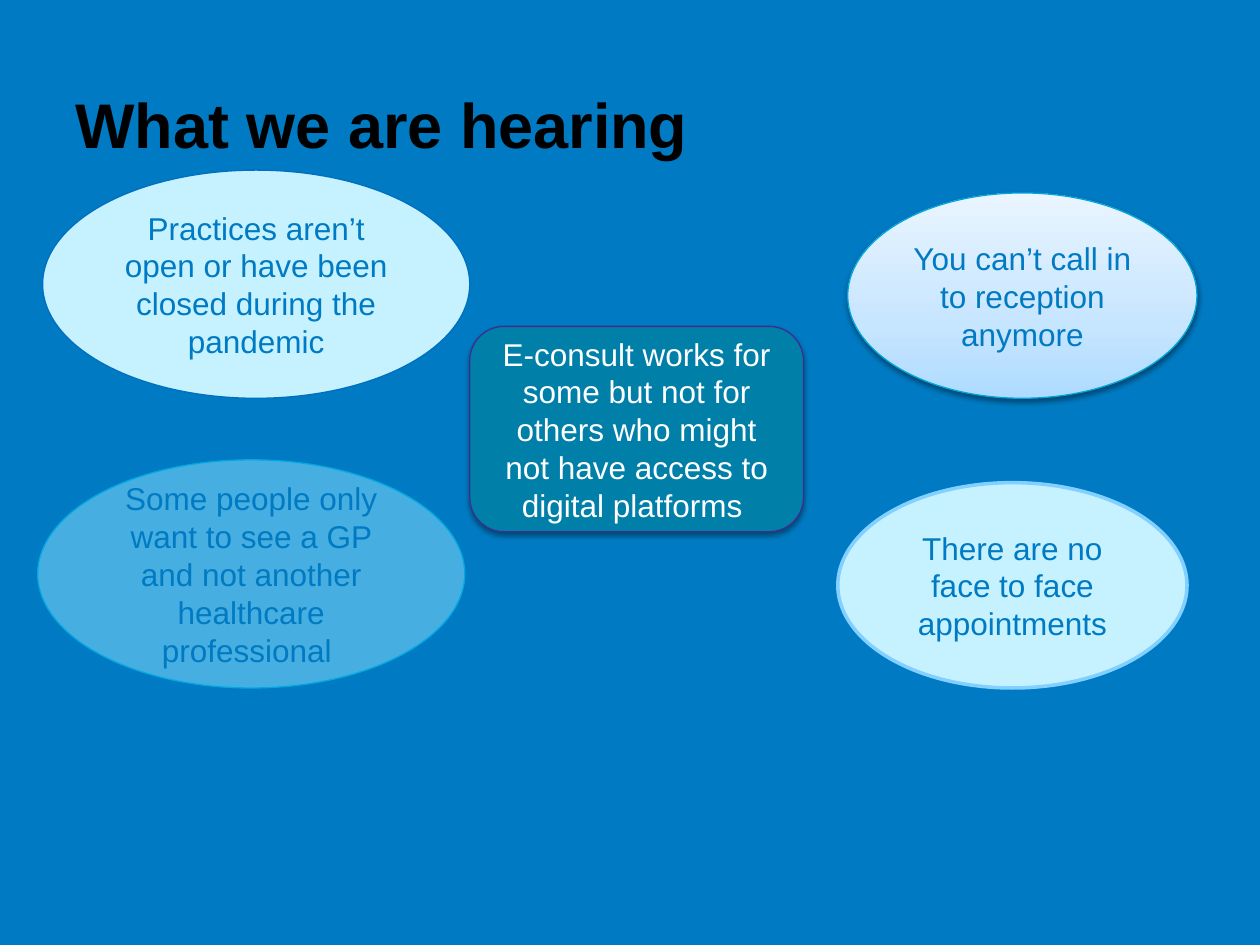
from lxml.etree import SubElement
from pptx import Presentation
from pptx.dml.color import RGBColor as RGB
from pptx.enum.shapes import MSO_SHAPE as Shape
from pptx.enum.text import MSO_ANCHOR as Anchor, PP_ALIGN as Align
from pptx.oxml.ns import qn
from pptx.util import Cm, Pt

COLORS = {
    "background": "007AC2", "title": "000000", "text": "007AC2",
    "white": "FFFFFF", "pale": "C6F1FF", "sky": "8DE3FF", "teal": "007FA9",
    "blue_line": "0070C0", "purple_line": "3D2D91", "cyan_line": "00A9E1",
    "light_line": "81D0FF", "aqua_line": "00A5DC", "shadow": "000000",
    "fade_low": "AEDBFF", "fade_middle": "C6E5FF", "fade_high": "E9F5FF",
}
FADE = [(0, "fade_low"), (35, "fade_middle"), (100, "fade_high")]
LARGE, SMALL, BOX = (8.61, 4.6), (7.04, 4.14), (6.73, 4.14)


def add_color(parent, name, alpha=None):
    color = SubElement(parent, qn("a:srgbClr"), val=COLORS[name])
    if alpha is not None:
        SubElement(color, qn("a:alpha"), val=str(alpha * 1000))


class SlideBuilder:
    font = "Arial"

    def __init__(self, slide):
        self.slide = slide
        background = slide.background.fill
        background.solid()
        background.fore_color.rgb = RGB.from_string(COLORS["background"])

    def set_text(self, shape, text, color, align, **font_format):
        frame = shape.text_frame
        frame.word_wrap = True
        frame.vertical_anchor = Anchor.MIDDLE
        paragraph = frame.paragraphs[0]
        paragraph.alignment = align
        run = paragraph.add_run()
        run.text = text
        run.font.color.rgb = RGB.from_string(COLORS[color])
        for name, value in {"name": self.font, **font_format}.items():
            setattr(run.font, name, value)

    def title(self, text):
        box = self.slide.shapes.add_textbox(Cm(1.27), Cm(2.08), Cm(22.86), Cm(2.18))
        self.set_text(box, text, "title", Align.LEFT, size=Pt(36), bold=True)
        box.text_frame.margin_bottom = Cm(1.5)

    def bubble(self, text, position, size, fill, line, kind=Shape.OVAL,
               color="text", width=0.75, alpha=None, shadow=False):
        """Add a captioned shape; fill is a colour name or a list of gradient stops."""
        shape = self.slide.shapes.add_shape(kind, *map(Cm, position + size))
        if isinstance(fill, list):
            self.fade(shape, fill)
        else:
            shape.fill.solid()
            shape.fill.fore_color.rgb = RGB.from_string(COLORS[fill])
            if alpha is not None:
                solid = shape.element.spPr.find(qn("a:solidFill"))
                solid.clear()
                add_color(solid, fill, alpha)
        shape.line.color.rgb = RGB.from_string(COLORS[line])
        shape.line.width = Pt(width)
        shape.shadow.inherit = False
        if shadow:
            self.drop_shadow(shape)
        self.set_text(shape, text, color, Align.CENTER, size=Pt(18))

    def fade(self, shape, stops):
        shape.fill.gradient()
        shape.fill.gradient_angle = 90
        stop_list = shape.element.spPr.find(qn("a:gradFill")).find(qn("a:gsLst"))
        stop_list.clear()
        for percent, name in stops:
            add_color(SubElement(stop_list, qn("a:gs"), pos=str(percent * 1000)), name)

    def drop_shadow(self, shape):
        effects = shape.element.spPr.find(qn("a:effectLst"))
        outer = SubElement(effects, qn("a:outerShdw"), blurRad=str(Pt(3.1)),
                           dist=str(Pt(1.6)), dir="5400000", rotWithShape="0")
        add_color(outer, "shadow", 38)


def main():
    presentation = Presentation()
    presentation.slide_width, presentation.slide_height = Cm(25.4), Cm(19.05)
    builder = SlideBuilder(presentation.slides.add_slide(presentation.slide_layouts[6]))
    builder.title("What we are hearing")
    builder.bubble("Practices aren’t open or have been closed during the pandemic",
                   (0.86, 3.43), LARGE, "pale", "blue_line")
    builder.bubble("E-consult works for some but not for others who might not have "
                   "access to digital platforms ", (9.47, 6.58), BOX, "teal",
                   "purple_line", kind=Shape.ROUNDED_RECTANGLE, color="white", shadow=True)
    builder.bubble("Some people only want to see a GP and not another healthcare "
                   "professional ", (0.76, 9.27), LARGE, "sky", "cyan_line", alpha=50)
    builder.bubble("There are no face to face appointments",
                   (16.89, 9.73), SMALL, "pale", "light_line", width=2)
    builder.bubble("You can’t call in to reception anymore",
                   (17.09, 3.89), SMALL, FADE, "aqua_line", shadow=True)
    presentation.save("out.pptx")


if __name__ == "__main__":
    main()
